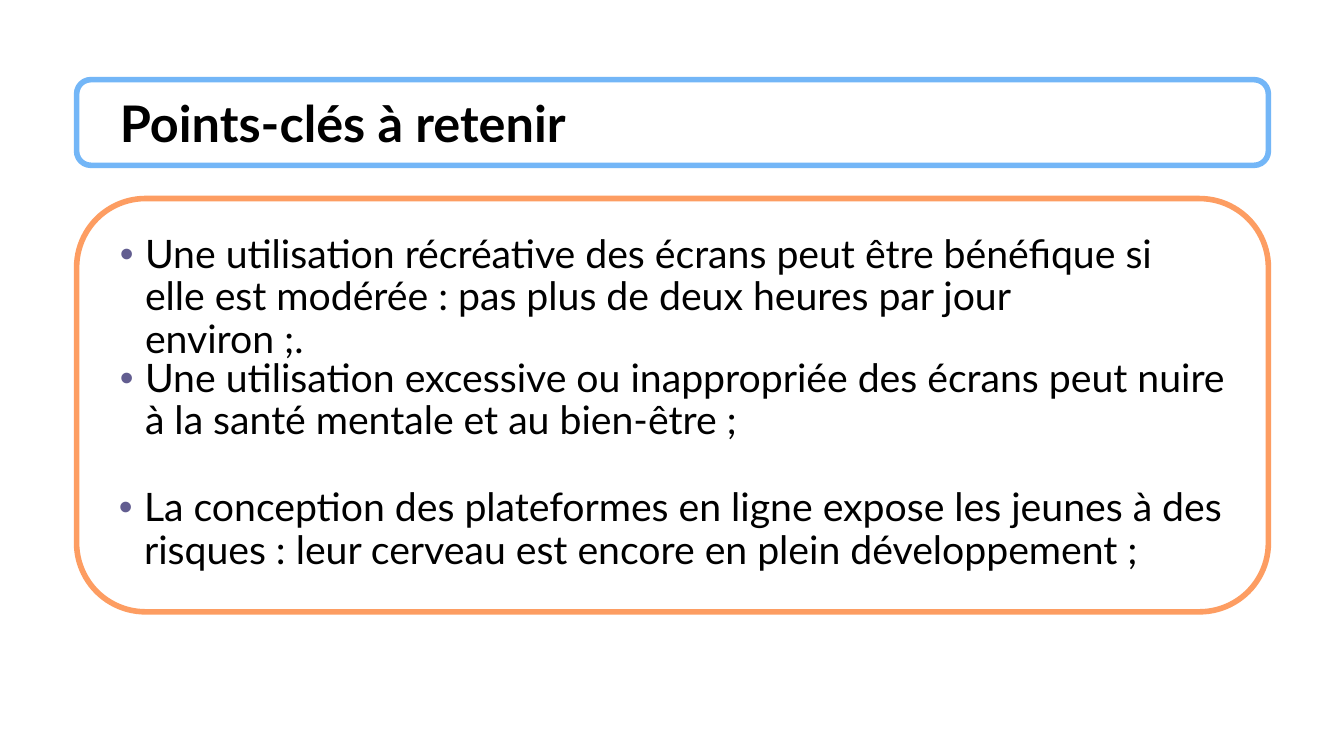
from dataclasses import dataclass

from lxml.etree import SubElement
from pptx import Presentation
from pptx.dml.color import RGBColor
from pptx.enum.shapes import MSO_SHAPE
from pptx.enum.text import MSO_ANCHOR, MSO_AUTO_SIZE, PP_ALIGN
from pptx.oxml.ns import qn
from pptx.slide import Slide
from pptx.text.text import _Paragraph as Paragraph
from pptx.util import Inches, Pt

FONT = "Lato"
BLACK = "000000"
BULLET_COLOR = "625D90"
FRAME_LEFT, FRAME_WIDTH = 0.76, 11.82
POINT_HEIGHT = 1.06


@dataclass
class Frame:
    top: float
    height: float
    color: str


@dataclass
class KeyPoint:
    left: float
    top: float
    width: float
    text: str


FRAMES = [Frame(0.79, 0.85, "73B6F7"), Frame(1.97, 4.1, "FD9D62")]

KEY_POINTS = [
    KeyPoint(1.09, 2.28, 10.7,
             "Une utilisation récréative des écrans peut être bénéfique si elle est "
             "modérée : pas plus de deux heures par jour environ ;."),
    KeyPoint(1.09, 3.51, 11.18,
             "Une utilisation excessive ou inappropriée des écrans peut nuire à la "
             "santé mentale et au bien-être ;"),
    KeyPoint(1.08, 4.79, 11.18,
             "La conception des plateformes en ligne expose les jeunes à des "
             "risques : leur cerveau est encore en plein développement ;"),
]


def rgb(color: str) -> RGBColor:
    return RGBColor.from_string(color)


def format_runs(para: Paragraph, size: int, bold: bool = False) -> None:
    for span in para.runs:
        span.font.name = FONT
        span.font.size = Pt(size)
        span.font.bold = bold
        span.font.color.rgb = rgb(BLACK)


def add_bullet(para: Paragraph) -> None:
    properties = para._p.get_or_add_pPr()
    properties.set("marL", str(Inches(0.25)))
    properties.set("indent", str(Inches(-0.25)))
    color = SubElement(properties, qn("a:buClr"))
    SubElement(color, qn("a:srgbClr"), val=BULLET_COLOR)
    SubElement(properties, qn("a:buFont"), typeface="Arial")
    SubElement(properties, qn("a:buChar"), char="•")


def set_title(page: Slide, text: str) -> None:
    title = page.shapes.title
    title.left, title.top = Inches(1.09), Inches(0.86)
    title.width, title.height = Inches(10.84), Inches(0.71)
    text_frame = title.text_frame
    text_frame.text = text
    text_frame.word_wrap = True
    text_frame.auto_size = MSO_AUTO_SIZE.SHAPE_TO_FIT_TEXT
    text_frame.vertical_anchor = MSO_ANCHOR.MIDDLE
    para = text_frame.paragraphs[0]
    para.alignment = PP_ALIGN.LEFT
    format_runs(para, 36, bold=True)


def add_frame(page: Slide, frame: Frame) -> None:
    shape = page.shapes.add_shape(
        MSO_SHAPE.ROUNDED_RECTANGLE, Inches(FRAME_LEFT), Inches(frame.top),
        Inches(FRAME_WIDTH), Inches(frame.height))
    shape.shadow.inherit = False
    shape.fill.background()
    shape.line.color.rgb = rgb(frame.color)
    shape.line.width = Pt(4)


def add_key_point(page: Slide, point: KeyPoint) -> None:
    box = page.shapes.add_textbox(Inches(point.left), Inches(point.top),
                                  Inches(point.width), Inches(POINT_HEIGHT))
    box.text_frame.word_wrap = True
    para = box.text_frame.paragraphs[0]
    para.text = point.text
    add_bullet(para)
    para.line_spacing = 0.9
    format_runs(para, 28)


def main() -> None:
    deck = Presentation()
    deck.slide_width, deck.slide_height = Inches(13.33), Inches(7.5)
    page = deck.slides.add_slide(deck.slide_layouts.get_by_name("Title Only"))
    set_title(page, "Points-clés à retenir")
    for frame in FRAMES:
        add_frame(page, frame)
    for point in KEY_POINTS:
        add_key_point(page, point)
    deck.save("out.pptx")


if __name__ == "__main__":
    main()
